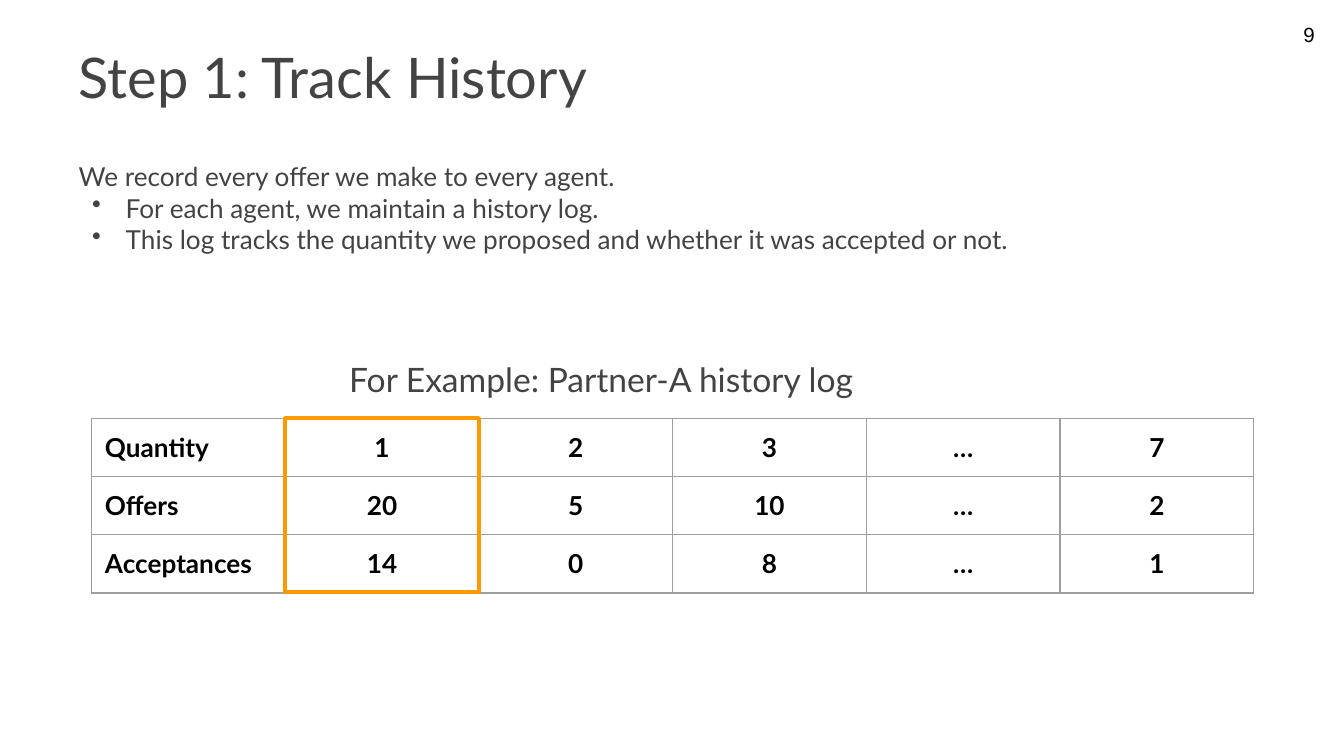
from lxml.etree import SubElement
from pptx import Presentation
from pptx.dml.color import RGBColor
from pptx.enum.shapes import MSO_SHAPE
from pptx.enum.text import MSO_ANCHOR, PP_ALIGN
from pptx.oxml.ns import qn
from pptx.util import Pt

GRAY, BLACK, ORANGE, BORDER = "434343", "000000", "FF9900", "9E9E9E"
TABLE_X, TABLE_Y, COL_W, ROW_H = 49, 224, 103.8, 31.1
ROWS = [
    ["Quantity", "1", "2", "3", "…", "7"],
    ["Offers", "20", "5", "10", "…", "2"],
    ["Acceptances", "14", "0", "8", "…", "1"],
]
BODY = [
    ("We record every offer we make to every agent.", False),
    ("For each agent, we maintain a history log.", True),
    ("This log tracks the quantity we proposed and whether it was accepted or not.", True),
]


def color(value):
    return RGBColor.from_string(value)


def set_margins(target, x, y):
    margins = {"margin_left": x, "margin_right": x, "margin_top": y, "margin_bottom": y}
    for name, value in margins.items():
        setattr(target, name, Pt(value))


def add_run(p, text, size, fill, font="Lato", bold=False):
    r = p.add_run()
    r.text = text
    for name, value in {"size": Pt(size), "name": font, "bold": bold}.items():
        setattr(r.font, name, value)
    r.font.color.rgb = color(fill)


def set_bullet(p):
    pPr = p._p.get_or_add_pPr()
    pPr.set("marL", str(Pt(25.2)))
    pPr.set("indent", str(Pt(-18)))
    clr = SubElement(pPr, qn("a:buClr"))
    SubElement(clr, qn("a:srgbClr"), val=GRAY)
    SubElement(pPr, qn("a:buChar"), char="•")


def add_text(s, box, lines, size, fill=GRAY, font="Lato", margins=(5.2, 2.6),
             align=PP_ALIGN.LEFT, anchor=MSO_ANCHOR.TOP):
    tf = s.shapes.add_textbox(*map(Pt, box)).text_frame
    tf.word_wrap = True
    tf.vertical_anchor = anchor
    set_margins(tf, *margins)
    for i, (text, bulleted) in enumerate(lines):
        p = tf.add_paragraph() if i else tf.paragraphs[0]
        p.alignment = align
        if bulleted:
            set_bullet(p)
        add_run(p, text, size, fill, font)


def set_borders(cell):
    tcPr = cell._tc.get_or_add_tcPr()
    for i, side in enumerate(("a:lnL", "a:lnR", "a:lnT", "a:lnB")):
        ln = tcPr.makeelement(qn(side), {"w": str(Pt(0.75))})
        SubElement(SubElement(ln, qn("a:solidFill")), qn("a:srgbClr"), val=BORDER)
        tcPr.insert(i, ln)


def add_history_table(s):
    n_rows, n_cols = len(ROWS), len(ROWS[0])
    box = (TABLE_X, TABLE_Y, n_cols * COL_W, n_rows * ROW_H)
    table = s.shapes.add_table(n_rows, n_cols, *map(Pt, box)).table
    table.first_row = table.horz_banding = False
    for col in table.columns:
        col.width = Pt(COL_W)
    for i, values in enumerate(ROWS):
        table.rows[i].height = Pt(ROW_H)
        for j, value in enumerate(values):
            cell = table.cell(i, j)
            cell.fill.background()
            set_margins(cell, 7.2, 7.2)
            set_borders(cell)
            p = cell.text_frame.paragraphs[0]
            p.alignment = PP_ALIGN.CENTER if j else PP_ALIGN.LEFT
            add_run(p, value, 14, BLACK, bold=True)


def add_column_frame(s, col):
    box = (TABLE_X + col * COL_W, TABLE_Y, COL_W, len(ROWS) * ROW_H)
    sp = s.shapes.add_shape(MSO_SHAPE.RECTANGLE, *map(Pt, box))
    sp.shadow.inherit = False
    sp.fill.background()
    sp.line.color.rgb = color(ORANGE)
    sp.line.width = Pt(2.25)


def main():
    prs = Presentation()
    prs.slide_width, prs.slide_height = Pt(720), Pt(405)
    s = prs.slides.add_slide(prs.slide_layouts[6])

    # Title, body and page number
    add_text(s, (37, 11, 648, 60), [("Step 1: Track History", False)], 30,
             anchor=MSO_ANCHOR.MIDDLE)
    add_text(s, (37, 83.5, 648, 240), BODY, 14)
    add_text(s, (541.5, 9.4, 168, 28), [("9", False)], 11, BLACK, "Arial",
             align=PP_ALIGN.RIGHT)

    # Example table with the first quantity framed
    add_text(s, (180, 185, 361, 36), [("For Example: Partner-A history log", False)], 18,
             margins=(7.2, 7.2))
    add_history_table(s)
    add_column_frame(s, 1)

    prs.save("out.pptx")


if __name__ == "__main__":
    main()
